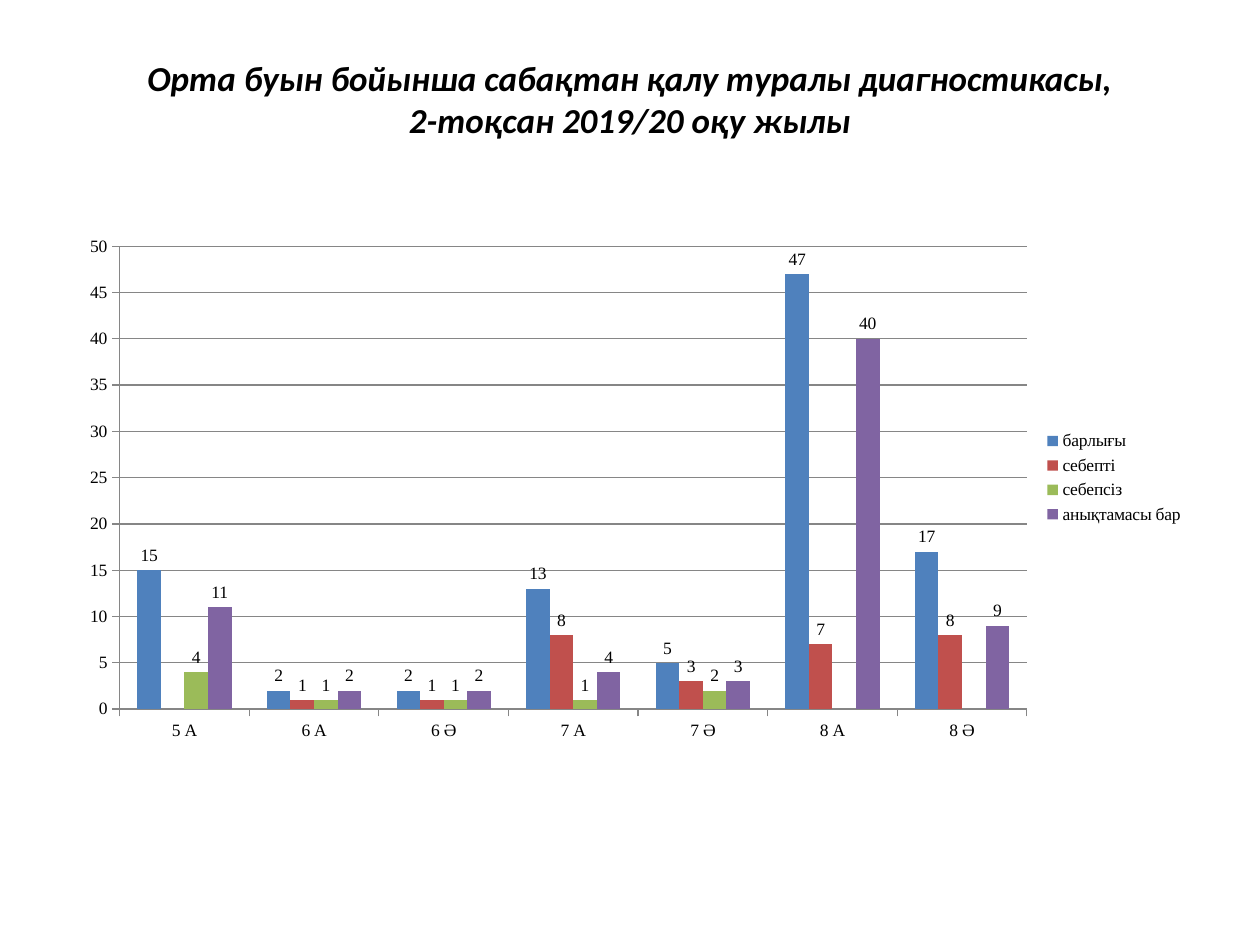
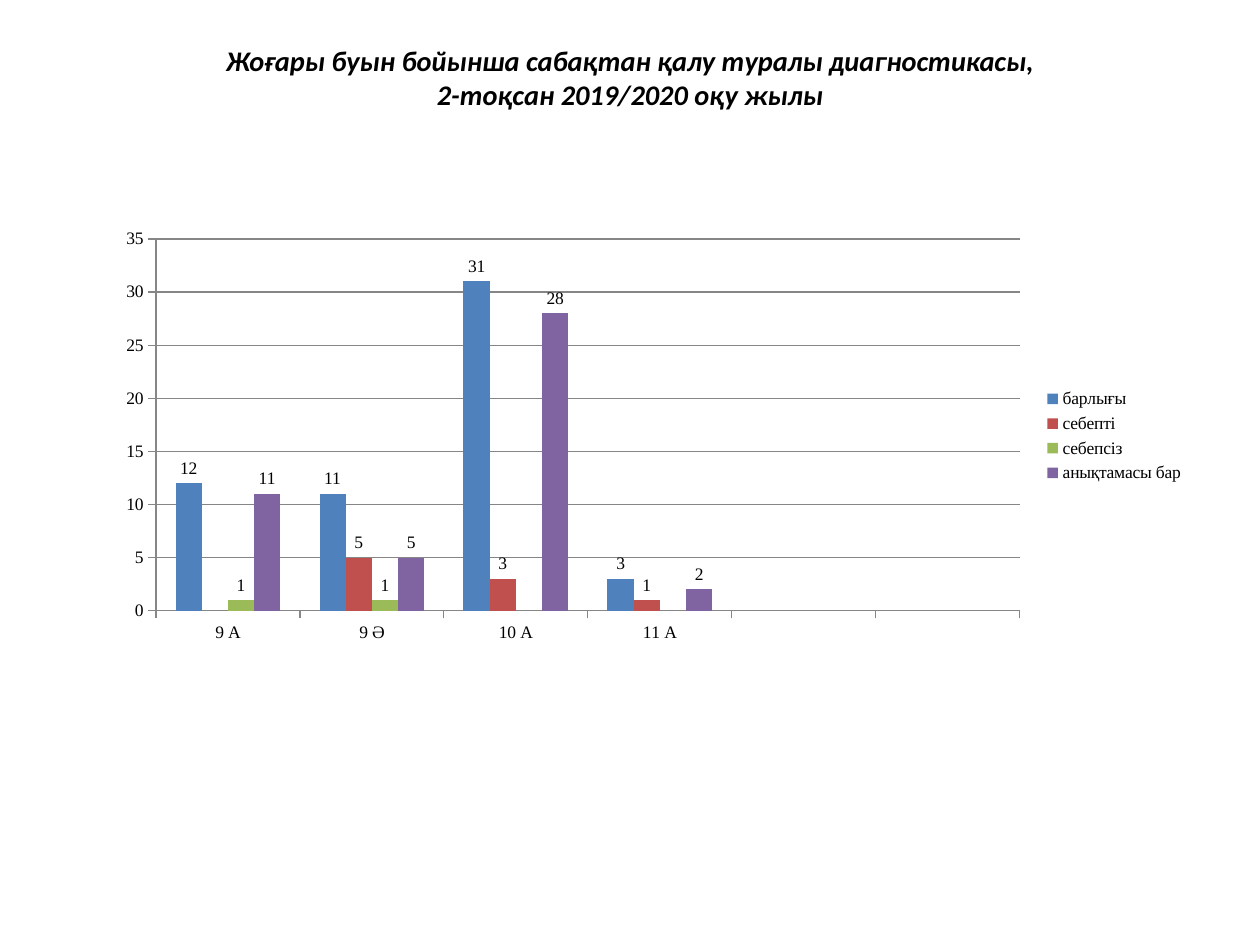
from lxml.etree import SubElement
from pptx import Presentation
from pptx.chart.data import CategoryChartData
from pptx.dml.color import RGBColor
from pptx.enum.chart import XL_CHART_TYPE, XL_LABEL_POSITION, XL_LEGEND_POSITION, XL_TICK_MARK
from pptx.enum.text import MSO_ANCHOR, MSO_AUTO_SIZE, PP_ALIGN
from pptx.oxml.ns import qn
from pptx.util import Inches, Pt

BLACK = RGBColor(0x00, 0x00, 0x00)
GRID_GREY = RGBColor(0x86, 0x86, 0x86)
ABSENCE_COLOURS = {
    "барлығы": RGBColor(0x4F, 0x81, 0xBD),
    "себепті": RGBColor(0xC0, 0x50, 0x4D),
    "себепсіз": RGBColor(0x9B, 0xBB, 0x59),
    "анықтамасы бар": RGBColor(0x80, 0x64, 0xA2),
}
TITLE_FONT = "Calibri"
CHART_FONT = "Times New Roman"
SLIDE_WIDTH, SLIDE_HEIGHT = Inches(10), Inches(7.5)
MARGIN = Inches(0.5)
CHART_TOP = Inches(1.75)
TITLE_ONLY = 5

MIDDLE_SCHOOL = {
    "5 А": (15, None, 4, 11),
    "6 А": (2, 1, 1, 2),
    "6 Ә": (2, 1, 1, 2),
    "7 А": (13, 8, 1, 4),
    "7 Ә": (5, 3, 2, 3),
    "8 А": (47, 7, None, 40),
    "8 Ә": (17, 8, None, 9),
}
HIGH_SCHOOL = {
    "9 А": (12, None, 1, 11),
    "9 Ә": (11, 5, 1, 5),
    "10 А": (31, 3, None, 28),
    "11 А": (3, 1, None, 2),
}


def set_title(slide, lines, size, bottom_inset):
    """Write the heading lines into the title placeholder."""
    title = slide.shapes.title
    title.left, title.top = MARGIN, Inches(0.3)
    title.width, title.height = SLIDE_WIDTH - 2 * MARGIN, Inches(1.25)
    frame = title.text_frame
    frame.word_wrap = True
    frame.auto_size = MSO_AUTO_SIZE.NONE
    frame.vertical_anchor = MSO_ANCHOR.MIDDLE
    frame.margin_bottom = Inches(bottom_inset)
    heading = frame.paragraphs[0]
    heading.alignment = PP_ALIGN.CENTER
    for number, line in enumerate(lines):
        if number:
            heading.add_line_break()
        run = heading.add_run()
        run.text = line
        run.font.name = TITLE_FONT
        run.font.size = Pt(size)
        run.font.bold = run.font.italic = True
        run.font.color.rgb = BLACK


def absence_data(classes, empty_slots):
    """Turn the counts by class into chart data, with free slots at the end."""
    data = CategoryChartData()
    data.categories = [*classes, *[""] * empty_slots]
    for name, counts in zip(ABSENCE_COLOURS, zip(*classes.values())):
        data.add_series(name, [*counts, *[None] * empty_slots])
    return data


def style_axis(axis):
    """Give an axis a thin grey line and outer ticks."""
    axis.major_tick_mark = XL_TICK_MARK.OUTSIDE
    axis.minor_tick_mark = XL_TICK_MARK.NONE
    axis.format.line.color.rgb = GRID_GREY
    axis.format.line.width = Pt(0.75)


def style_series(series):
    """Colour the columns and put the values above them."""
    fill = series.format.fill
    fill.solid()
    fill.fore_color.rgb = ABSENCE_COLOURS[series.name]
    labels = series.data_labels
    labels.show_value = True
    labels.position = XL_LABEL_POSITION.OUTSIDE_END


def place_plot(chart, shares):
    """Fix the inner plot area at shares of the chart's size."""
    plot_area = chart.plots[0]._element.getparent()
    for old in plot_area.findall(qn("c:layout")):
        plot_area.remove(old)
    layout = plot_area.makeelement(qn("c:layout"))
    plot_area.insert(0, layout)
    manual = SubElement(layout, qn("c:manualLayout"))
    settings = {"layoutTarget": "inner", "xMode": "edge", "yMode": "edge",
                **dict(zip("xywh", shares))}
    for tag, value in settings.items():
        SubElement(manual, qn(f"c:{tag}")).set("val", str(value))


def add_absence_chart(slide, classes, left, height, top_value, empty_slots=0):
    """Add the clustered columns of absences by class."""
    chart = slide.shapes.add_chart(
        XL_CHART_TYPE.COLUMN_CLUSTERED, left, CHART_TOP,
        SLIDE_WIDTH - MARGIN - left, height,
        absence_data(classes, empty_slots)).chart
    chart.has_title = False
    chart.font.name = CHART_FONT
    chart.font.size = Pt(10)
    chart.font.color.rgb = BLACK
    chart.has_legend = True
    chart.legend.position = XL_LEGEND_POSITION.RIGHT
    chart.legend.include_in_layout = False
    style_axis(chart.category_axis)
    counts = chart.value_axis
    style_axis(counts)
    counts.minimum_scale, counts.maximum_scale, counts.major_unit = 0, top_value, 5
    counts.has_major_gridlines = True
    counts.major_gridlines.format.line.color.rgb = GRID_GREY
    counts.major_gridlines.format.line.width = Pt(0.75)
    columns = chart.plots[0]
    columns.gap_width, columns.overlap = 150, 0
    columns.vary_by_categories = False
    for series in columns.series:
        style_series(series)
    return chart


def main():
    """Build both absence slides."""
    deck = Presentation()
    deck.slide_width, deck.slide_height = SLIDE_WIDTH, SLIDE_HEIGHT
    layout = deck.slide_layouts[TITLE_ONLY]

    middle = deck.slides.add_slide(layout)
    set_title(middle, ("Орта буын бойынша сабақтан қалу туралы диагностикасы,",
                       "2-тоқсан 2019/20 оқу жылы"), 20, 0.34)
    middle_chart = add_absence_chart(middle, MIDDLE_SCHOOL, MARGIN, Inches(4.13), 50)
    place_plot(middle_chart, (0.05, 0.05, 0.8, 0.9))

    high = deck.slides.add_slide(layout)
    set_title(high, ("Жоғары буын бойынша сабақтан қалу туралы диагностикасы,",
                     "2-тоқсан 2019/2020 оқу жылы"), 16.2, 0.68)
    add_absence_chart(high, HIGH_SCHOOL, Inches(0.83), Inches(3.42), 35, empty_slots=2)

    deck.save("out.pptx")


if __name__ == "__main__":
    main()
